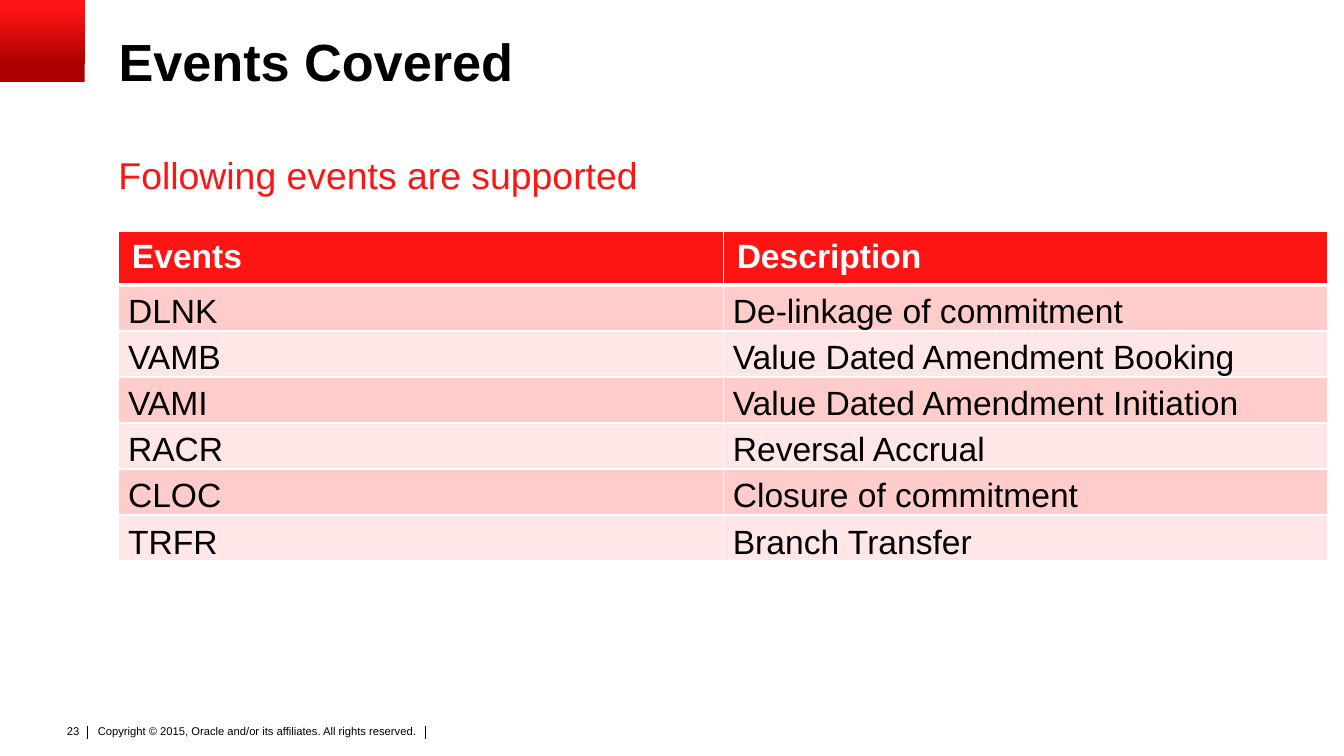
from pptx import Presentation
from pptx.dml.color import RGBColor
from pptx.enum.shapes import MSO_CONNECTOR, MSO_SHAPE
from pptx.enum.text import MSO_ANCHOR, PP_ALIGN
from pptx.oxml.ns import qn
from pptx.util import Cm, Pt
from lxml.etree import SubElement

RED, DARK_RED = "FF1414", "AA0000"
BLACK, WHITE = "000000", "FFFFFF"
BAND_COLORS = ("FFCCCC", "FFE7E7")
LEFT, WIDTH = 2.24, 22.86
ROW_HEIGHT = 0.87

EVENTS = [
    ("Events", "Description"),
    ("DLNK", "De-linkage of commitment"),
    ("VAMB", "Value Dated Amendment Booking"),
    ("VAMI", "Value Dated Amendment Initiation"),
    ("RACR", "Reversal Accrual"),
    ("CLOC", "Closure of commitment"),
    ("TRFR", "Branch Transfer"),
]


def color(value):
    return RGBColor.from_string(value)


def set_text(text_frame, text, size, text_color, bold=False):
    text_frame.text = text
    paragraph = text_frame.paragraphs[0]
    font = paragraph.runs[0].font
    font.name, font.size, font.bold = "Arial", Pt(size), bold
    font.color.rgb = color(text_color)
    return paragraph


def set_margins(target, horizontal, vertical):
    target.margin_left = target.margin_right = Cm(horizontal)
    target.margin_top = target.margin_bottom = Cm(vertical)


def add_text(slide, box, text, size, text_color, margins, wrap=True):
    shape = slide.shapes.add_textbox(*map(Cm, box))
    shape.text_frame.word_wrap = wrap
    set_margins(shape.text_frame, *margins)
    return set_text(shape.text_frame, text, size, text_color)


def set_title(slide, text):
    title = slide.shapes.title
    title.left, title.top = Cm(LEFT), Cm(0.69)
    title.width, title.height = Cm(WIDTH), Cm(2.13)
    title.text_frame.vertical_anchor = MSO_ANCHOR.TOP
    set_margins(title.text_frame, 0, 0)
    paragraph = set_text(title.text_frame, text, 28, BLACK, bold=True)
    paragraph.alignment = PP_ALIGN.LEFT
    paragraph.line_spacing = 0.9


def add_corner_block(slide):
    block = slide.shapes.add_shape(MSO_SHAPE.RECTANGLE, 0, 0, Cm(1.6), Cm(1.55))
    block.shadow.inherit = False
    block.line.fill.background()
    block.fill.gradient()
    block.fill.gradient_angle = 90
    stops = ((0.2, DARK_RED), (0.9, RED))
    for stop, (position, value) in zip(block.fill.gradient_stops, stops):
        stop.position = position
        stop.color.rgb = color(value)


def add_divider(slide, x):
    line = slide.shapes.add_connector(
        MSO_CONNECTOR.STRAIGHT, Cm(x), Cm(13.72), Cm(x), Cm(13.97))
    line.line.color.rgb = color(BLACK)
    line.line.width = Pt(0.5)
    SubElement(line._element.spPr, qn("a:effectLst"))


def set_borders(cell, **widths):
    properties = cell._tc.get_or_add_tcPr()
    for side in "LRTB":
        border = SubElement(properties, qn(f"a:ln{side}"),
                            w=str(Pt(widths.get(side, 1))))
        fill = SubElement(border, qn("a:solidFill"))
        SubElement(fill, qn("a:srgbClr"), val=WHITE)


def format_cell(cell, text, row):
    # The heavy rule lies between the header and the first event
    if row == 0:
        set_borders(cell, B=3)
        fill = RED
    else:
        set_borders(cell, T=3 if row == 1 else 1)
        fill = BAND_COLORS[(row - 1) % 2]
        set_margins(cell, 0.18, 0)
        cell.vertical_anchor = MSO_ANCHOR.BOTTOM
    cell.fill.solid()
    cell.fill.fore_color.rgb = color(fill)
    set_text(cell.text_frame, text, 18, BLACK if row else WHITE, bold=row == 0)


def add_events_table(slide):
    table = slide.shapes.add_table(
        len(EVENTS), 2, Cm(LEFT), Cm(4.37), Cm(WIDTH),
        Cm(ROW_HEIGHT * len(EVENTS))).table
    for row, texts in enumerate(EVENTS):
        table.rows[row].height = Cm(ROW_HEIGHT)
        for column, text in enumerate(texts):
            format_cell(table.cell(row, column), text, row)


def add_footer(slide):
    add_text(slide, (1.75, 13.64, 6.96, 0.61),
             "Copyright © 2015, Oracle and/or its affiliates. All rights reserved.",
             6, BLACK, (0.1, 0.05))
    for x in (1.65, 8.04):
        add_divider(slide, x)
    number = add_text(slide, (0.99, 13.56, 0.76, 0.51), "23", 6, BLACK,
                      (0.25, 0.13), wrap=False)
    number.alignment = PP_ALIGN.RIGHT


def main():
    presentation = Presentation()
    presentation.slide_width, presentation.slide_height = Cm(25.4), Cm(14.29)
    slide = presentation.slides.add_slide(presentation.slide_layouts[5])

    # Frame
    add_footer(slide)
    add_corner_block(slide)

    # Content
    set_title(slide, "Events Covered")
    add_text(slide, (LEFT, 2.87, WIDTH, 0.84),
             "Following events are supported", 20, RED, (0, 0))
    add_events_table(slide)

    presentation.save("out.pptx")


if __name__ == "__main__":
    main()
